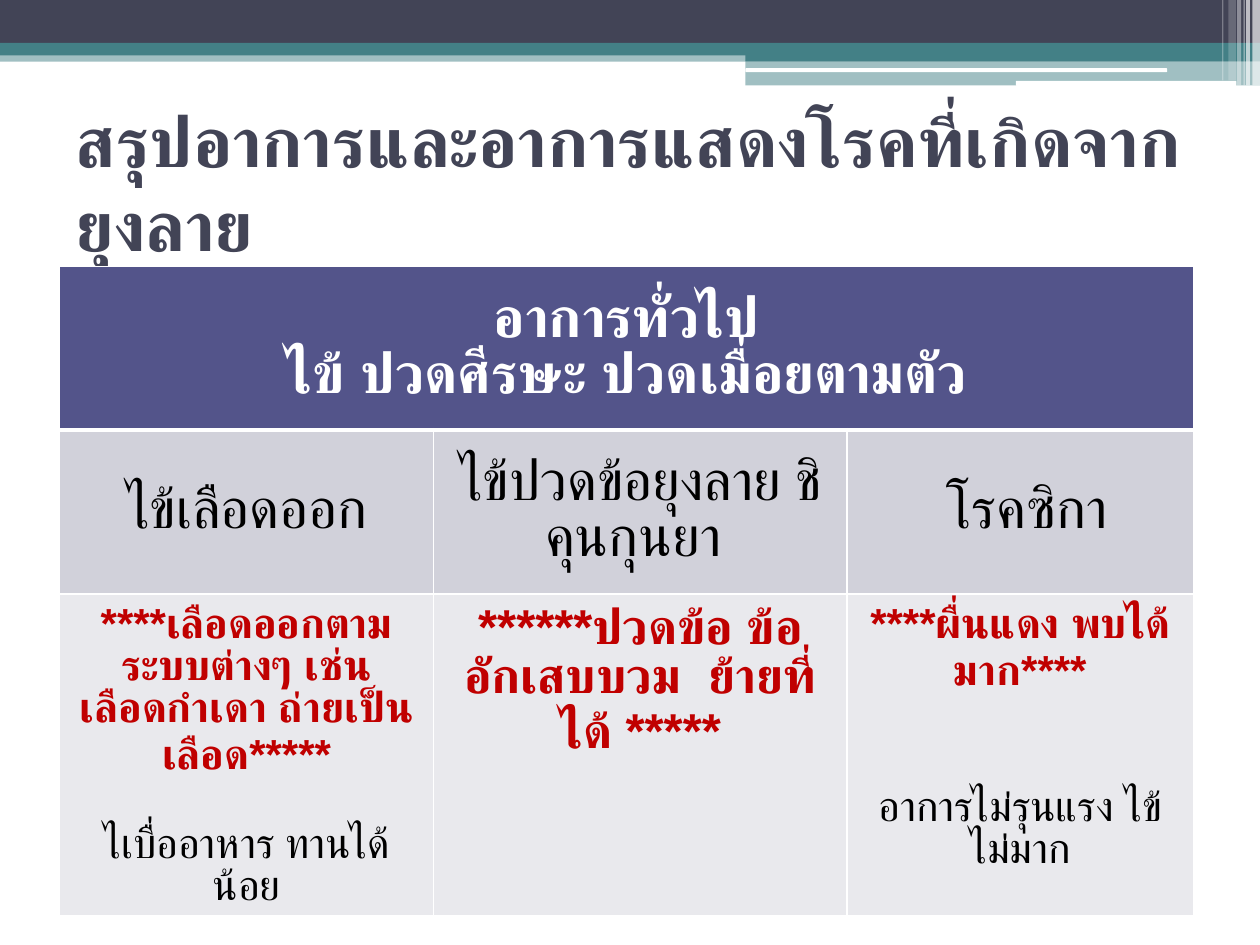
from dataclasses import dataclass
from lxml.etree import SubElement
from pptx import Presentation
from pptx.dml.color import RGBColor
from pptx.enum.shapes import MSO_SHAPE
from pptx.enum.text import MSO_ANCHOR, MSO_AUTO_SIZE, PP_ALIGN
from pptx.oxml.ns import qn
from pptx.util import Pt


@dataclass(frozen=True)
class Theme:
    dark: str = "424456"
    teal: str = "438086"
    white: str = "FFFFFF"
    black: str = "000000"
    alert: str = "C00000"
    header: str = "53548A"
    disease: str = "D1D1DA"
    symptom: str = "E9E9ED"
    title_font: str = "Lato"
    body_font: str = "Arial"
    title_size: int = 40
    heading_size: int = 32
    joint_size: int = 28
    detail_size: int = 24


@dataclass(frozen=True)
class Box:
    left: float
    top: float
    width: float
    height: float


@dataclass(frozen=True)
class Line:
    text: str
    size: int
    color: str
    bold: bool = False
    gap: float = 0


THEME = Theme()
BLANK_LINE = 27


def add_bar(slide, box, left, top, width, height, color, opacity=100, rounded=False):
    kind = MSO_SHAPE.ROUNDED_RECTANGLE if rounded else MSO_SHAPE.RECTANGLE
    bar = slide.shapes.add_shape(
        kind, Pt(box.left + left), Pt(box.top + top), Pt(width), Pt(height))
    bar.shadow.inherit = False
    bar.line.fill.background()
    bar.fill.solid()
    bar.fill.fore_color.rgb = RGBColor.from_string(color)
    if opacity < 100:
        tint = bar.fill._xPr.find(qn("a:solidFill"))[0]
        SubElement(tint, qn("a:alpha"), val=str(opacity * 1000))


def add_banner(slide, box):
    step = 426
    rest = box.width - step
    add_bar(slide, box, 0, 28.8, box.width, 6.5, THEME.teal, 50)
    add_bar(slide, box, 0, 0, box.width, 24.5, THEME.dark)
    add_bar(slide, box, 0, 24.5, box.width, 7.2, THEME.teal)
    add_bar(slide, box, step, 28, rest, 7, THEME.teal)
    add_bar(slide, box, step, 34.6, rest, 14.2, THEME.teal, 50)
    add_bar(slide, box, step, 39, 241, 2.2, THEME.white, rounded=True)
    add_bar(slide, box, 580.5, 46.2, 126, 2.9, THEME.white, rounded=True)
    stripes = [(715.7, 4.3, 48.8, 65), (712.1, 2.2, 48.8, 65),
               (710.6, 0.7, 48.8, 60), (707, 2.2, 48.8, 40),
               (702, 4.3, 46, 20), (698.4, 0.7, 46, 30)]
    for left, width, height, opacity in stripes:
        add_bar(slide, box, left, 0, width, height, THEME.white, opacity)


def add_run(paragraph, line, font_name):
    run = paragraph.add_run()
    run.text = line.text
    run.font.name = font_name
    run.font.size = Pt(line.size)
    run.font.bold = line.bold
    run.font.color.rgb = RGBColor.from_string(line.color)


def place_title(slide, box, text):
    title = slide.shapes.title
    title.left, title.top = Pt(box.left), Pt(box.top)
    title.width, title.height = Pt(box.width), Pt(box.height)
    frame = title.text_frame
    frame.word_wrap = True
    frame.auto_size = MSO_AUTO_SIZE.NONE
    frame.vertical_anchor = MSO_ANCHOR.MIDDLE
    paragraph = frame.paragraphs[0]
    paragraph.alignment = PP_ALIGN.LEFT
    add_run(paragraph, Line(text, THEME.title_size, THEME.dark, True), THEME.title_font)


def set_borders(cell, widths):
    properties = cell._tc.get_or_add_tcPr()
    for side, width in widths.items():
        border = SubElement(properties, qn(f"a:ln{side}"), w=str(Pt(width)))
        paint = SubElement(border, qn("a:solidFill"))
        SubElement(paint, qn("a:srgbClr"), val=THEME.white)


def fill_cell(cell, lines, color, anchor, widths):
    set_borders(cell, widths)
    cell.fill.solid()
    cell.fill.fore_color.rgb = RGBColor.from_string(color)
    cell.vertical_anchor = anchor
    frame = cell.text_frame
    for index, line in enumerate(lines):
        paragraph = frame.add_paragraph() if index else frame.paragraphs[0]
        paragraph.alignment = PP_ALIGN.CENTER
        paragraph.space_before = Pt(line.gap)
        add_run(paragraph, line, THEME.body_font)


def add_symptom_table(slide, box, general, diseases, symptoms):
    column_widths = [213.8, 236.2, 198]
    row_heights = [93.6, 93.6, 152.8]
    table = slide.shapes.add_table(
        len(row_heights), len(column_widths),
        Pt(box.left), Pt(box.top), Pt(box.width), Pt(box.height)).table
    table.horz_banding = False
    for column, width in zip(table.columns, column_widths):
        column.width = Pt(width)
    for row, height in zip(table.rows, row_heights):
        row.height = Pt(height)

    thin = {"L": 1, "R": 1, "T": 1, "B": 1}
    table.cell(0, 0).merge(table.cell(0, 2))
    general_lines = [Line(text, THEME.heading_size, THEME.white, True) for text in general]
    fill_cell(table.cell(0, 0), general_lines, THEME.header,
              MSO_ANCHOR.MIDDLE, {**thin, "B": 3})
    for column, (disease, details) in enumerate(zip(diseases, symptoms)):
        heading = Line(disease, THEME.heading_size, THEME.black)
        fill_cell(table.cell(1, column), [heading], THEME.disease,
                  MSO_ANCHOR.MIDDLE, {**thin, "T": 3})
        fill_cell(table.cell(2, column), details, THEME.symptom, MSO_ANCHOR.TOP, thin)


def main():
    presentation = Presentation()
    presentation.slide_width, presentation.slide_height = Pt(720), Pt(540)
    slide = presentation.slides.add_slide(presentation.slide_layouts[5])
    add_banner(slide, Box(0, 0, 720, 49))
    place_title(slide, Box(36, 62, 648, 84), "สรุปอาการและอาการแสดงโรคที่เกิดจากยุงลาย")

    detail = THEME.detail_size
    add_symptom_table(
        slide, Box(34, 152.2, 648, 340),
        ["อาการทั่วไป", "ไข้ ปวดศีรษะ ปวดเมื่อยตามตัว"],
        ["ไข้เลือดออก", "ไข้ปวดข้อยุงลาย ชิคุนกุนยา ", " โรคซิกา"],
        [
            [Line("****เลือดออกตามระบบต่างๆ เช่น เลือดกำเดา ถ่ายเป็นเลือด*****",
                  detail, THEME.alert, True),
             Line("ไเบื่ออาหาร ทานได้น้อย", detail, THEME.black, gap=BLANK_LINE)],
            [Line("******ปวดข้อ ข้ออักเสบบวม  ย้ายที่ได้ *****",
                  THEME.joint_size, THEME.alert, True)],
            [Line("****ผื่นแดง พบได้มาก****", detail, THEME.alert, True),
             Line("อาการไม่รุนแรง ไข้ไม่มาก", detail, THEME.black, gap=2 * BLANK_LINE)],
        ])
    presentation.save("out.pptx")


if __name__ == "__main__":
    main()
